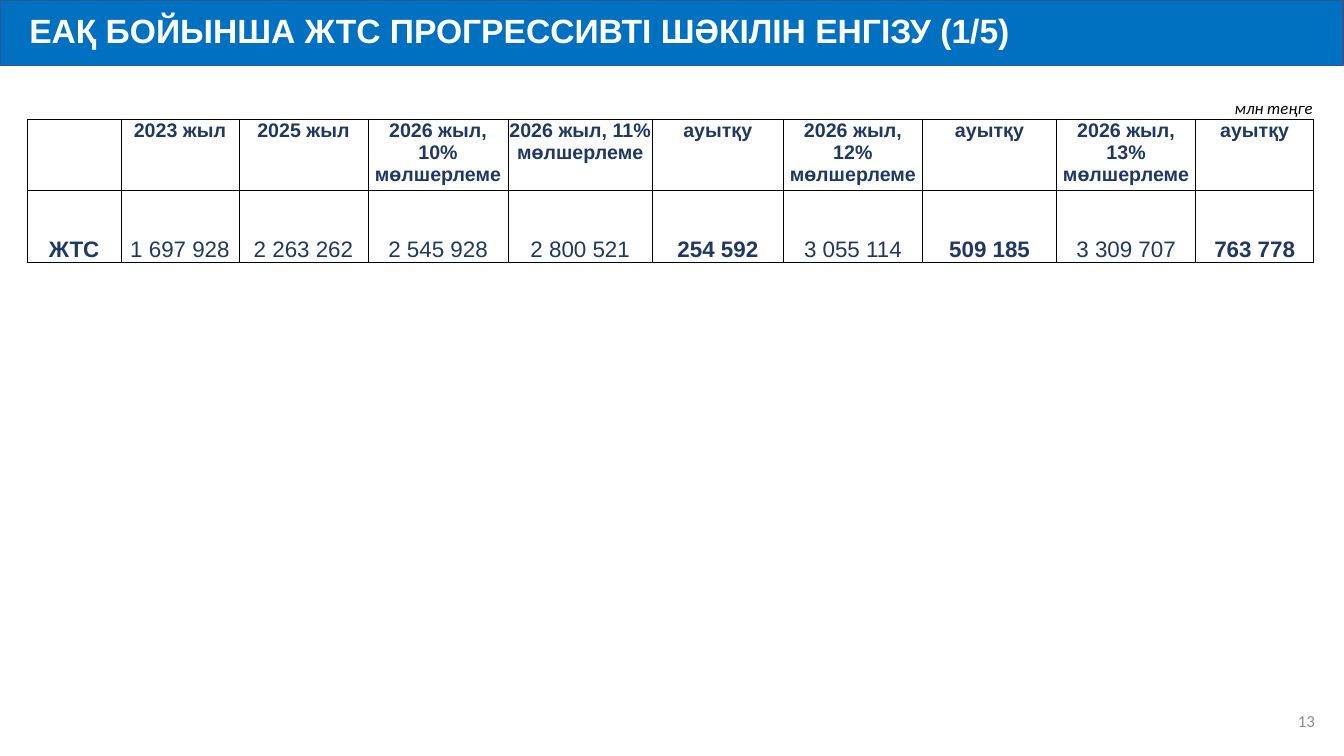
from dataclasses import dataclass

from lxml.etree import SubElement
from pptx import Presentation
from pptx.dml.color import RGBColor
from pptx.enum.text import MSO_ANCHOR, PP_ALIGN
from pptx.oxml.ns import qn
from pptx.util import Inches, Pt

# Content
TITLE = "ЕАҚ БОЙЫНША ЖТС ПРОГРЕССИВТІ ШӘКІЛІН ЕНГІЗУ (1/5)"
UNIT = "млн теңге"
PAGE = "13"
DEVIATION = "ауытқу"
# (heading, value, column width)
COLUMNS = [
    ("", "ЖТС", 0.93),
    ("2023 жыл", "1 697 928", 1.17),
    ("2025 жыл", "2 263 262", 1.28),
    ("2026 жыл, 10% мөлшерлеме", "2 545 928", 1.39),
    ("2026 жыл, 11% мөлшерлеме", "2 800 521", 1.43),
    (DEVIATION, "254 592", 1.3),
    ("2026 жыл, 12% мөлшерлеме", "3 055 114", 1.38),
    (DEVIATION, "509 185", 1.33),
    ("2026 жыл, 13% мөлшерлеме", "3 309 707", 1.38),
    (DEVIATION, "763 778", 1.17),
]
ROW_HEIGHTS = [0.65, 0.71, 0.71]


@dataclass(frozen=True)
class Theme:
    head_font: str = "Arial"
    note_font: str = "Calibri"
    bar: str = "0070C0"
    bar_line: str = "325491"
    white: str = "FFFFFF"
    navy: str = "203864"
    black: str = "000000"
    grey: str = "8C8C8C"
    title_size: int = 24
    value_size: int = 16
    heading_size: int = 14
    note_size: int = 12


T = Theme()


def write(tf, text, font, size, color, align, bold=False, italic=False):
    tf.text = text
    p = tf.paragraphs[0]
    p.alignment = align
    for r in p.runs:
        r.font.name, r.font.size = font, Pt(size)
        r.font.bold, r.font.italic = bold, italic
        r.font.color.rgb = RGBColor.from_string(color)
    return p


def set_borders(cell, visible):
    """Draw the named sides in black and clear the other ones."""
    tc_pr = cell._tc.get_or_add_tcPr()
    for side in "LRTB":
        ln = SubElement(tc_pr, qn(f"a:ln{side}"), w=str(Pt(0.5)))
        if side in visible:
            fill = SubElement(ln, qn("a:solidFill"))
            SubElement(fill, qn("a:srgbClr"), val=T.black)
        else:
            SubElement(ln, qn("a:noFill"))


prs = Presentation()
prs.slide_width, prs.slide_height = Inches(13.33), Inches(7.5)
slide = prs.slides.add_slide(prs.slide_layouts[5])

# Title bar
bar = slide.shapes.title
bar.left, bar.top, bar.width, bar.height = 0, 0, Inches(13.32), Inches(0.65)
bar.fill.solid()
bar.fill.fore_color.rgb = RGBColor.from_string(T.bar)
bar.line.color.rgb = RGBColor.from_string(T.bar_line)
bar.line.width = Pt(1)
tf = bar.text_frame
tf.vertical_anchor = MSO_ANCHOR.MIDDLE
tf.margin_left = Inches(0.29)
p = write(tf, TITLE, T.head_font, T.title_size, T.white, PP_ALIGN.LEFT, bold=True)
p.line_spacing = 0.9

# Table: unit row, heading row, value row
width = sum(w for _, _, w in COLUMNS)
table = slide.shapes.add_table(
    len(ROW_HEIGHTS), len(COLUMNS), Inches(0.27), Inches(0.53),
    Inches(width), Inches(sum(ROW_HEIGHTS))).table
table.first_row = table.horz_banding = False
for row, height in zip(table.rows, ROW_HEIGHTS):
    row.height = Inches(height)

for c, (heading, value, col_width) in enumerate(COLUMNS):
    table.columns[c].width = Inches(col_width)
    unit_cell, heading_cell, value_cell = (table.cell(r, c) for r in range(3))
    for cell in (unit_cell, heading_cell, value_cell):
        cell.margin_left = cell.margin_right = cell.margin_top = Inches(0.01)
        cell.margin_bottom = 0
        set_borders(cell, "B" if cell is unit_cell else "LRTB")
        cell.fill.background()
    unit_cell.vertical_anchor = value_cell.vertical_anchor = MSO_ANCHOR.BOTTOM
    if heading:
        write(heading_cell.text_frame, heading, T.head_font, T.heading_size,
              T.navy, PP_ALIGN.CENTER, bold=True)
    write(value_cell.text_frame, value, T.head_font, T.value_size, T.navy,
          PP_ALIGN.CENTER, bold=heading in ("", DEVIATION))

write(table.cell(0, len(COLUMNS) - 1).text_frame, UNIT, T.note_font,
      T.note_size, T.black, PP_ALIGN.RIGHT, italic=True)

# Page number
box = slide.shapes.add_textbox(Inches(10.14), Inches(6.95), Inches(3), Inches(0.4))
tf = box.text_frame
tf.word_wrap = True
tf.vertical_anchor = MSO_ANCHOR.MIDDLE
write(tf, PAGE, T.note_font, T.note_size, T.grey, PP_ALIGN.RIGHT)

prs.save("out.pptx")
